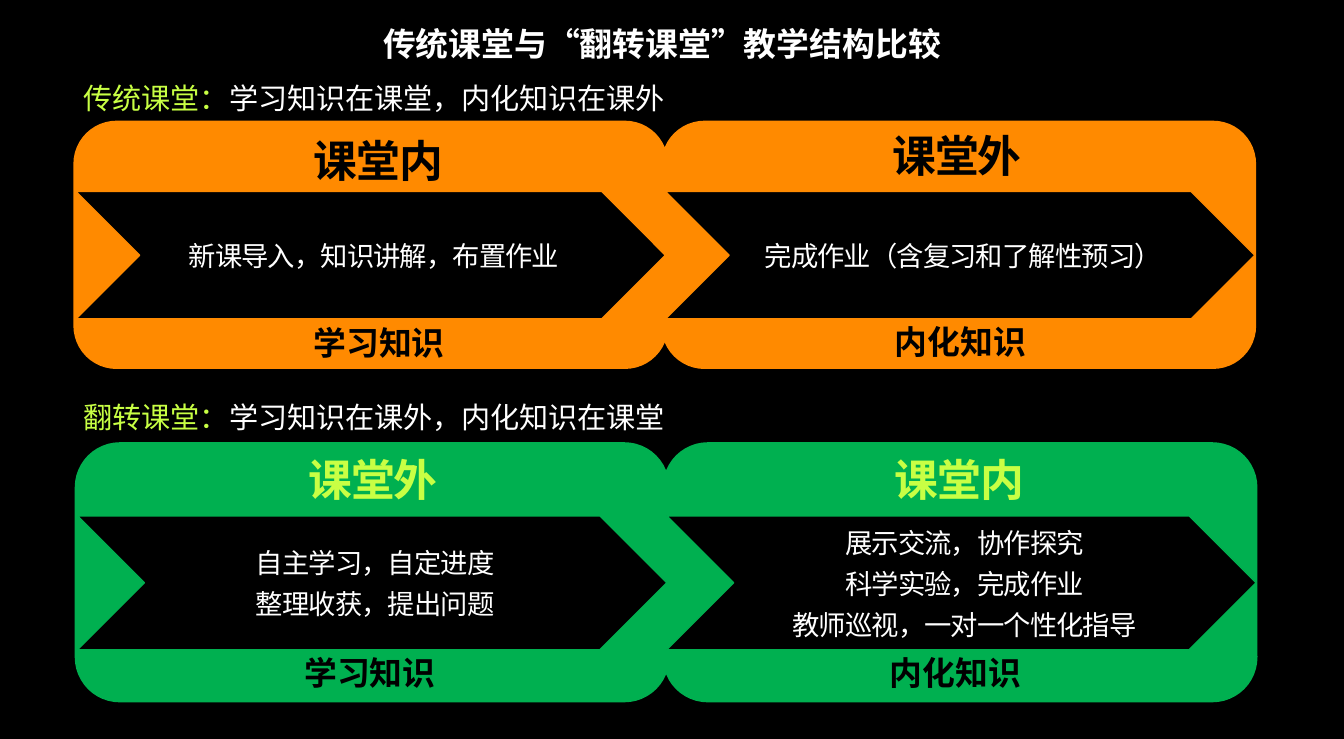
from pptx import Presentation
from pptx import util as u
from pptx.dml.color import RGBColor
from pptx.enum import shapes, text
from pptx.oxml.ns import qn
from lxml import etree

Inches, Pt = u.Inches, u.Pt
COLORS = {
    "black": "000000",
    "white": "FFFFFF",
    "lime": "C8FF44",
    "green": "00B050",
    "orange": "FF8A00",
}
CJK_FONT = "Noto Sans CJK SC"
LATIN_FONT = "Cabin"
PANEL_WIDTH = 4.49


class SlideBuilder:
    def __init__(self, slide):
        self.slide = slide
        background = slide.background.fill
        background.solid()
        background.fore_color.rgb = self.color("black")

    def color(self, name):
        return RGBColor.from_string(COLORS[name])

    def block(self, kind, box, fill, line, line_width=0.75):
        shape = self.slide.shapes.add_shape(kind, *map(Inches, box))
        shape.shadow.inherit = False
        shape.fill.solid()
        shape.fill.fore_color.rgb = self.color(fill)
        shape.line.color.rgb = self.color(line)
        shape.line.width = Pt(line_width)
        return shape

    def run(self, paragraph, words, size, color, font=LATIN_FONT, bold=False, spacing=None):
        run = paragraph.add_run()
        run.text = words
        run.font.size = Pt(size)
        run.font.bold = bold
        run.font.name = font
        run.font.color.rgb = self.color(color)
        properties = run.font._element
        properties.set("lang", "zh-CN")
        if spacing is not None:
            properties.set("spc", str(int(spacing * 100)))
        etree.SubElement(properties, qn("a:ea")).set("typeface", CJK_FONT)

    def panel(self, box, color):
        self.block(shapes.MSO_SHAPE.ROUNDED_RECTANGLE, box, color, color, 3)

    def arrow(self, box, line, lines):
        """Black chevron with centred lines of text."""
        frame = self.block(shapes.MSO_SHAPE.CHEVRON, box, "black", line).text_frame
        frame.word_wrap = True
        frame.vertical_anchor = text.MSO_ANCHOR.MIDDLE
        frame.margin_left = frame.margin_bottom = Inches(0.1)
        frame.margin_right = frame.margin_top = Inches(0.05)
        for index, words in enumerate(lines):
            paragraph = frame.add_paragraph() if index else frame.paragraphs[0]
            paragraph.alignment = text.PP_ALIGN.CENTER
            paragraph.line_spacing = 1.25
            self.run(paragraph, words, 15, "white", CJK_FONT, spacing=-0.5)

    def label(self, box, runs, fill=None, wrap=False, **style):
        """One line of text given as (words, size, colour) runs, on a filled box if asked."""
        if fill:
            shape = self.block(shapes.MSO_SHAPE.RECTANGLE, box, fill, fill)
        else:
            shape = self.slide.shapes.add_textbox(*map(Inches, box))
        frame = shape.text_frame
        frame.word_wrap = wrap
        frame.auto_size = text.MSO_AUTO_SIZE.SHAPE_TO_FIT_TEXT
        frame.vertical_anchor = text.MSO_ANCHOR.TOP
        paragraph = frame.paragraphs[0]
        paragraph.alignment = text.PP_ALIGN.LEFT
        for words, size, color in runs:
            self.run(paragraph, words, size, color, **style)

    def heading(self, left, top, words, color, fill=None):
        self.label((left, top, 1.22, 0.5), [(words, 24, color)], fill,
                   font=CJK_FONT, bold=True, spacing=-0.5)

    def caption(self, left, top, words):
        self.label((left, top, 1.24, 0.4), [(words, 18, "black")], bold=True)

    def intro(self, top, name, words):
        self.label((0.54, top, 4.8, 0.37), [(name, 16, "lime"), (words, 16, "white")])

    def classroom(self, model):
        """Two panels side by side, each with a heading, an arrow and a caption."""
        color = model["color"]
        lefts = [model["left"], model["left"] + 4.48]
        for left in lefts:
            self.panel((left, model["top"], PANEL_WIDTH, model["height"]), color)
        arrow_top, arrow_height = model["arrow"]
        for left, stage in zip((lefts[0], lefts[0] + PANEL_WIDTH), model["stages"]):
            self.arrow((left, arrow_top, PANEL_WIDTH, arrow_height), color, stage["lines"])
        for stage in model["stages"]:
            self.heading(*stage["heading"], model["heading_color"], model["heading_fill"])
            self.caption(*stage["caption"])
        self.intro(*model["intro"])


MODELS = [
    {
        "color": "green", "left": 0.59, "top": 3.39, "height": 1.94, "arrow": (3.93, 1.02),
        "heading_color": "lime", "heading_fill": "green",
        "intro": (2.99, "翻转课堂：", "学习知识在课外，内化知识在课堂"),
        "stages": [
            {"heading": (2.25, 3.4, "课堂外"), "caption": (2.22, 4.92, "学习知识"),
             "lines": ["自主学习，自定进度", "整理收获，提出问题"]},
            {"heading": (6.72, 3.4, "课堂内"), "caption": (6.68, 4.92, "内化知识"),
             "lines": ["展示交流，协作探究", "科学实验，完成作业", "教师巡视，一对一个性化指导"]},
        ],
    },
    {
        "color": "orange", "left": 0.58, "top": 0.94, "height": 1.85, "arrow": (1.46, 0.97),
        "heading_color": "black", "heading_fill": None,
        "intro": (0.56, "传统课堂：", "学习知识在课堂，内化知识在课外"),
        "stages": [
            {"heading": (2.29, 0.97, "课堂内"), "caption": (2.29, 2.41, "学习知识"),
             "lines": ["新课导入，知识讲解，布置作业"]},
            {"heading": (6.7, 0.93, "课堂外"), "caption": (6.72, 2.4, "内化知识"),
             "lines": ["完成作业（含复习和了解性预习）"]},
        ],
    },
]


def main():
    presentation = Presentation()
    presentation.slide_width = Inches(10.24)
    presentation.slide_height = Inches(5.63)
    builder = SlideBuilder(presentation.slides.add_slide(presentation.slide_layouts[6]))
    for model in MODELS:
        builder.classroom(model)
    builder.label((2.82, 0.13, 4.48, 0.4), [("传统课堂与“翻转课堂”教学结构比较", 18, "white")],
                  wrap=True, bold=True)
    presentation.save("out.pptx")


if __name__ == "__main__":
    main()
